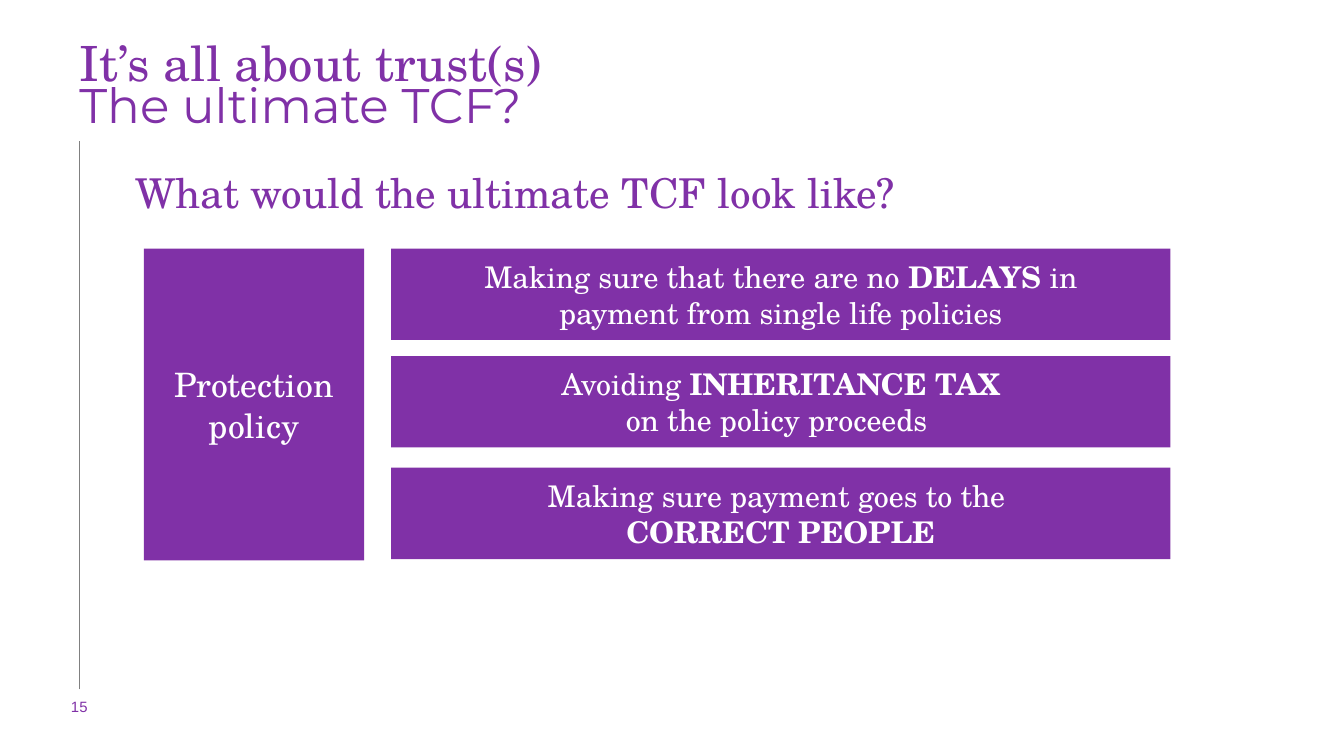
from lxml import etree
from pptx import Presentation
from pptx import util as u
from pptx.dml.color import RGBColor
from pptx.enum import shapes, text
from pptx.oxml.ns import qn

PURPLE = RGBColor(0x80, 0x31, 0xA7)
WHITE = RGBColor(0xFF, 0xFF, 0xFF)
GREY = RGBColor(0x80, 0x80, 0x80)
SERIF, SANS, PLAIN = "TeX Gyre Schola", "Montserrat", "Arial"

# Grid in inches
MARGIN = 0.59
PANEL_LEFT, PANEL_WIDTH = 1.07, 1.64
ROW_LEFT, ROW_WIDTH, ROW_HEIGHT = 2.91, 5.8, 0.68
PANEL_TOP, PANEL_HEIGHT = 1.85, 2.32

# Each goal: top, then lines of (words, bold) spans
GOALS = [
    (1.85, [[("Making sure that there are no ", False), ("DELAYS ", True), ("in", False)],
            [("payment from single life policies", False)]]),
    (2.65, [[("Avoiding ", False), ("INHERITANCE TAX", True)],
            [("on the policy proceeds ", False)]]),
    (3.48, [[("Making sure payment goes to the ", False)],
            [("CORRECT PEOPLE", True)]]),
]


def write(box, lines, size, font=SERIF, color=PURPLE, align=text.PP_ALIGN.LEFT,
          anchor=text.MSO_ANCHOR.TOP, spacing=1.0, insets=(0, 0)):
    """Fill a shape with lines, each a string or a list of (words, bold)."""
    frame = box.text_frame
    frame.word_wrap = True
    frame.auto_size = text.MSO_AUTO_SIZE.NONE
    frame.vertical_anchor = anchor
    frame.margin_left = frame.margin_right = u.Inches(insets[0])
    frame.margin_top = frame.margin_bottom = u.Inches(insets[1])
    for index, line in enumerate(lines):
        para = frame.add_paragraph() if index else frame.paragraphs[0]
        para.alignment = align
        para.line_spacing = spacing
        para.space_before = u.Pt(0)
        for words, bold in ([(line, False)] if isinstance(line, str) else line):
            span = para.add_run()
            span.text = words
            span.font.name = font
            span.font.size = u.Pt(size)
            span.font.bold = bold
            span.font.color.rgb = color


def add_label(page, area, words, size, **style):
    box = page.shapes.add_textbox(*map(u.Inches, area))
    write(box, [words], size, **style)


def add_panel(page, area, lines, size):
    box = page.shapes.add_shape(shapes.MSO_SHAPE.RECTANGLE, *map(u.Inches, area))
    box.shadow.inherit = False
    box.fill.solid()
    box.fill.fore_color.rgb = PURPLE
    box.line.fill.background()
    write(box, lines, size, color=WHITE, align=text.PP_ALIGN.CENTER,
          anchor=text.MSO_ANCHOR.MIDDLE, insets=(0.1, 0.05))


def add_rule(page, left, top, bottom):
    rule = page.shapes.add_connector(
        shapes.MSO_CONNECTOR.STRAIGHT, *map(u.Inches, (left, bottom, left, top)))
    rule.line.color.rgb = GREY
    rule.line.width = u.Pt(0.75)
    etree.SubElement(rule._element.spPr, qn("a:effectLst"))


def add_title(page, area, words):
    title = page.shapes.title
    title.left, title.top, title.width, title.height = map(u.Inches, area)
    write(title, [words], 26, spacing=0.88)


def main():
    # Widescreen page, 16:9
    deck = Presentation()
    deck.slide_width = u.Inches(10)
    deck.slide_height = u.Inches(10) * 9 // 16
    page = deck.slides.add_slide(deck.slide_layouts[5])

    # Margin rule and page number
    add_rule(page, MARGIN, 1.05, 5.13)
    add_label(page, (0.24, 5.19, 0.7, 0.3), "15", 8, font=PLAIN,
              align=text.PP_ALIGN.CENTER)

    # Headings
    add_title(page, (MARGIN, 0.3, 9.23, 0.48), "It’s all about trust(s)")
    add_label(page, (MARGIN, 0.64, 9.22, 0.42), "The ultimate TCF?", 26,
              font=SANS, spacing=0.8)
    add_label(page, (0.91, 1.2, 7.92, 3.63),
              "What would the ultimate TCF look like?", 22, insets=(0.1, 0.05))

    # Goals beside the policy panel
    for top, lines in GOALS:
        add_panel(page, (ROW_LEFT, top, ROW_WIDTH, ROW_HEIGHT), lines, 16)
    add_panel(page, (PANEL_LEFT, PANEL_TOP, PANEL_WIDTH, PANEL_HEIGHT),
              ["Protection policy"], 18)

    deck.save("out.pptx")


if __name__ == "__main__":
    main()
